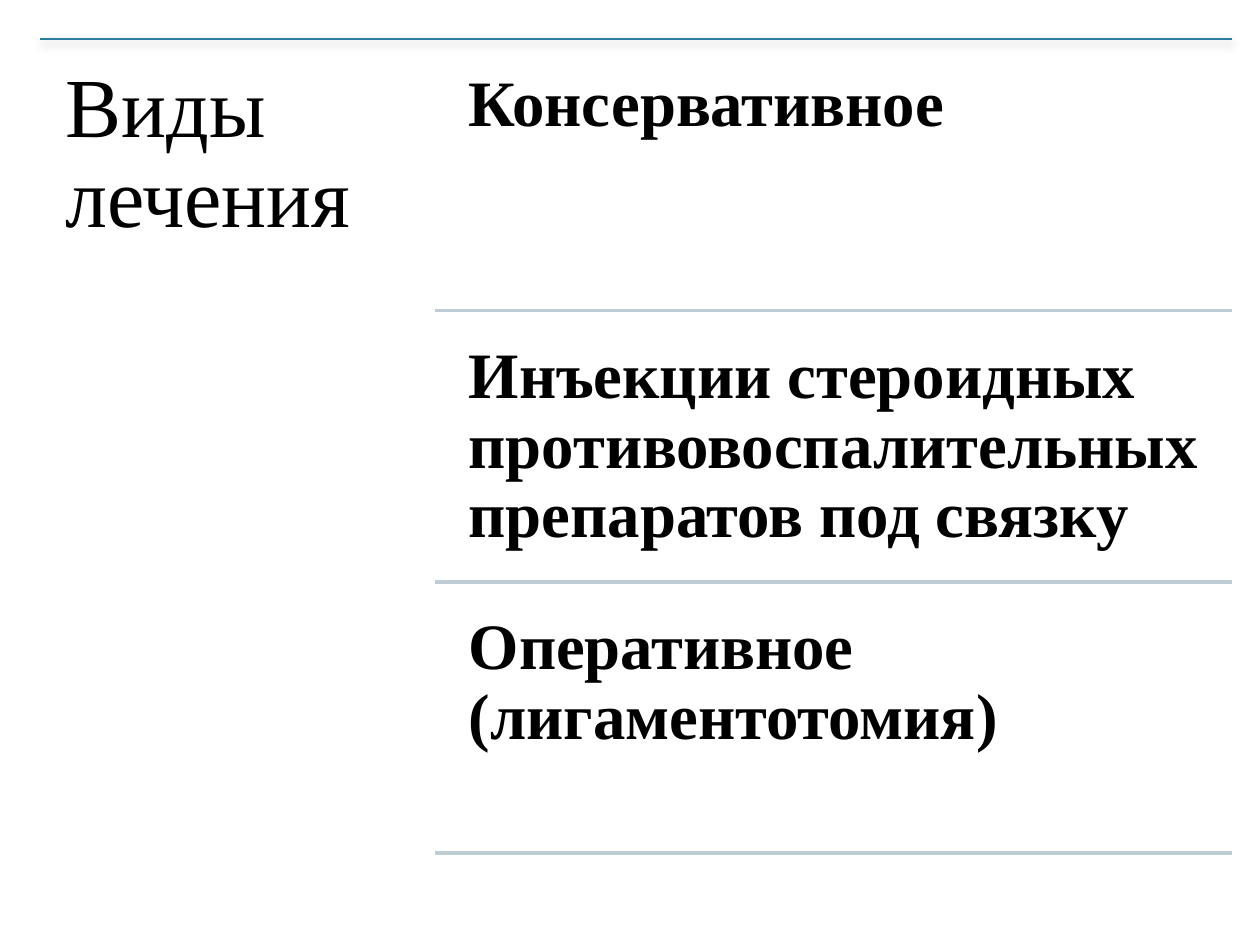
"""Build the slide that lists the kinds of treatment beside a title."""
from lxml import etree
from pptx import Presentation
from pptx import util as u
from pptx.dml.color import RGBColor
from pptx.enum import shapes, text
from pptx.oxml import parse_xml
from pptx.oxml.ns import nsdecls, qn

TITLE = "Виды лечения"
TREATMENTS = [
    "Консервативное",
    "Инъекции стероидных противовоспалительных препаратов под связку",
    "Оперативное (лигаментотомия)",
]
FONT = "Times New Roman"
LEFT, TOP, RIGHT = 0.81, 0.79, 24.84
TITLE_W, TITLE_H = 7.95, 16.67
ITEM_LEFT, ITEM_W, ITEM_H, GAP = 9.07, 15.75, 5.21, 0.26
SHADOW = (
    f'<a:effectLst {nsdecls("a")}><a:outerShdw blurRad="63500" dist="25400" dir="5400000" rotWithShape="0">'
    '<a:srgbClr val="000000"><a:alpha val="40000"/></a:srgbClr></a:outerShdw></a:effectLst>'
)


def color(value):
    return RGBColor.from_string(value)


def set_text(sp, content, size, inset, bold=False):
    tf = sp.text_frame
    tf.word_wrap = True
    tf.auto_size = text.MSO_AUTO_SIZE.NONE
    tf.vertical_anchor = text.MSO_ANCHOR.TOP
    tf.margin_left = tf.margin_top = tf.margin_right = tf.margin_bottom = u.Cm(inset)
    p = tf.paragraphs[0]
    p.text = content
    p.alignment = text.PP_ALIGN.LEFT
    p.line_spacing = 0.9
    p.font.name, p.font.size, p.font.bold = FONT, u.Pt(size), bold
    p.font.color.rgb = color("000000")


def add_rule(slide, left, y, value, width, shadow=False):
    line = slide.shapes.add_connector(
        shapes.MSO_CONNECTOR.STRAIGHT, u.Cm(left), u.Cm(y), u.Cm(RIGHT), u.Cm(y))
    line.line.color.rgb = color(value)
    line.line.width = u.Pt(width)
    sp_pr = line._element.spPr
    if shadow:
        sp_pr.append(parse_xml(SHADOW))
    else:
        etree.SubElement(sp_pr, qn("a:effectLst"))


def main():
    prs = Presentation()
    prs.slide_width, prs.slide_height = u.Cm(25.4), u.Cm(19.05)
    slide = prs.slides.add_slide(prs.slide_layouts[5])

    add_rule(slide, LEFT, TOP, "2C7C9F", 1, shadow=True)
    title = slide.shapes.title
    title.left, title.top = u.Cm(LEFT), u.Cm(TOP)
    title.width, title.height = u.Cm(TITLE_W), u.Cm(TITLE_H)
    set_text(title, TITLE, 48, 0.51)

    for i, treatment in enumerate(TREATMENTS):
        y = TOP + GAP + i * (ITEM_H + GAP)
        sp = slide.shapes.add_textbox(u.Cm(ITEM_LEFT), u.Cm(y), u.Cm(ITEM_W), u.Cm(ITEM_H))
        set_text(sp, treatment, 37, 0.38, bold=True)
        add_rule(slide, LEFT + TITLE_W, y + ITEM_H, "BECCD6", 2)

    prs.save("out.pptx")


if __name__ == "__main__":
    main()
